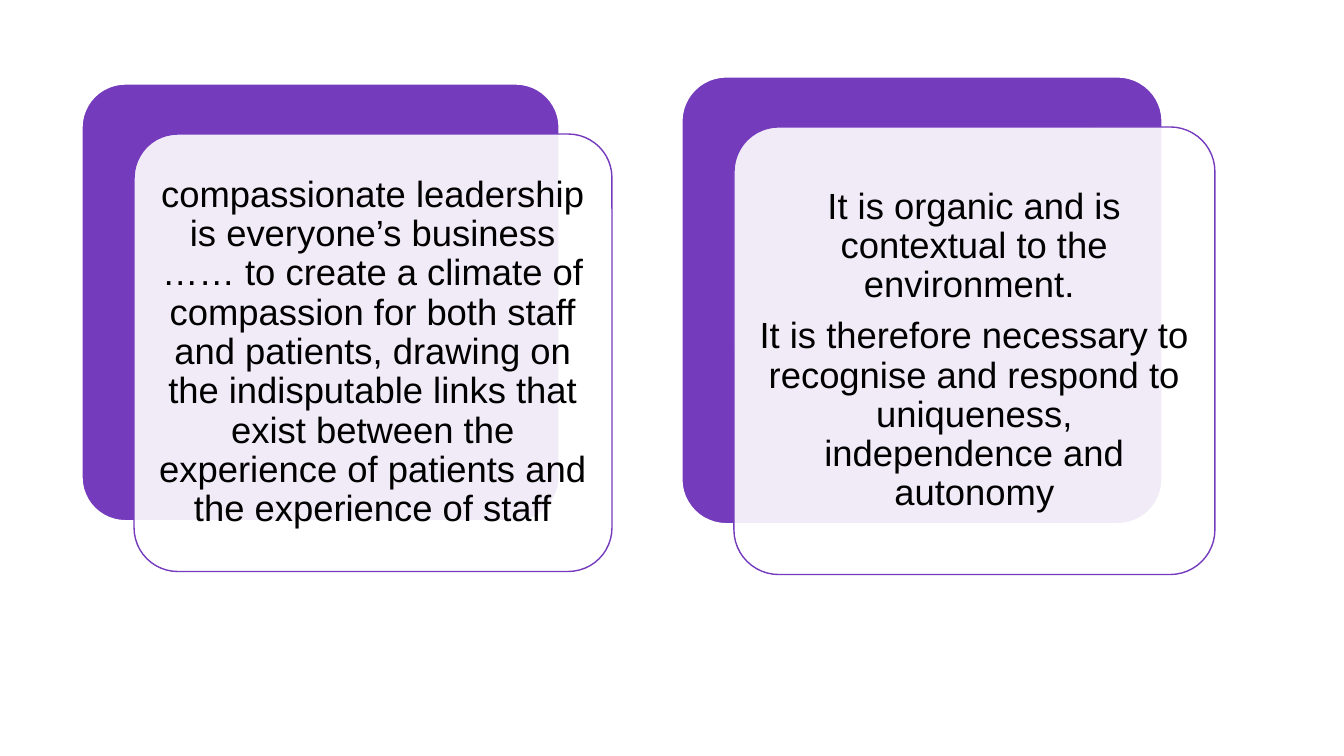
import pptx
import pptx.util
import pptx.dml.color
import pptx.enum.shapes
import pptx.enum.text
import pptx.oxml
from pptx.util import Inches

PURPLE = pptx.dml.color.RGBColor(0x75, 0x3B, 0xBD)
WHITE = pptx.dml.color.RGBColor(0xFF, 0xFF, 0xFF)
BLACK = pptx.dml.color.RGBColor(0x00, 0x00, 0x00)

FRONT_OFFSET = (0.52, 0.5)

# left, top, width, height in inches, then the paragraphs
CARDS = [
    (0.81, 0.83, 4.74, 4.34, [
        "compassionate leadership is everyone’s business …… to create a climate "
        "of compassion for both staff and patients, drawing on the indisputable "
        "links that exist between the experience of patients and the experience "
        "of staff",
    ]),
    (6.76, 0.76, 4.77, 4.44, [
        "It is organic and is contextual to the environment. ",
        "It is therefore necessary to recognise and respond to uniqueness, "
        "independence and autonomy",
    ]),
]


def add_panel(slide, left, top, width, height, fill, line, line_width):
    shape = slide.shapes.add_shape(
        pptx.enum.shapes.MSO_SHAPE.ROUNDED_RECTANGLE,
        Inches(left), Inches(top), Inches(width), Inches(height))
    shape.adjustments[0] = 0.1
    shape.shadow.inherit = False
    shape.fill.solid()
    shape.fill.fore_color.rgb = fill
    shape.line.color.rgb = line
    shape.line.width = pptx.util.Pt(line_width)
    return shape


def set_opacity(shape, percent):
    color = shape.fill._xPr.find(".//" + pptx.oxml.ns.qn("a:srgbClr"))
    alpha = pptx.oxml.parse_xml(
        f'<a:alpha {pptx.oxml.ns.nsdecls("a")} val="{percent * 1000}"/>')
    color.append(alpha)


def write_text(shape, paragraphs):
    text_frame = shape.text_frame
    text_frame.word_wrap = True
    text_frame.vertical_anchor = pptx.enum.text.MSO_ANCHOR.MIDDLE
    for side in ("left", "top", "right", "bottom"):
        setattr(text_frame, f"margin_{side}", Inches(0.11))
    text_frame.text = "\n".join(paragraphs)
    for index, paragraph in enumerate(text_frame.paragraphs):
        paragraph.alignment = pptx.enum.text.PP_ALIGN.CENTER
        paragraph.line_spacing = 0.9
        if index > 0:
            paragraph.space_before = pptx.util.Pt(8.5)
        for run in paragraph.runs:
            run.font.name = "Arial"
            run.font.size = pptx.util.Pt(26)
            run.font.color.rgb = BLACK


def add_card(slide, left, top, width, height, paragraphs):
    # Solid panel behind
    add_panel(slide, left, top, width, height, PURPLE, WHITE, 1.5)
    # Translucent panel in front, holding the text
    shift_x, shift_y = FRONT_OFFSET
    front = add_panel(slide, left + shift_x, top + shift_y, width, height,
                      WHITE, PURPLE, 1)
    set_opacity(front, 90)
    write_text(front, paragraphs)


def main():
    presentation = pptx.Presentation()
    presentation.slide_width = Inches(13.33)
    presentation.slide_height = Inches(7.5)
    slide = presentation.slides.add_slide(presentation.slide_layouts[6])
    for card in CARDS:
        add_card(slide, *card)
    presentation.save("out.pptx")


if __name__ == "__main__":
    main()
